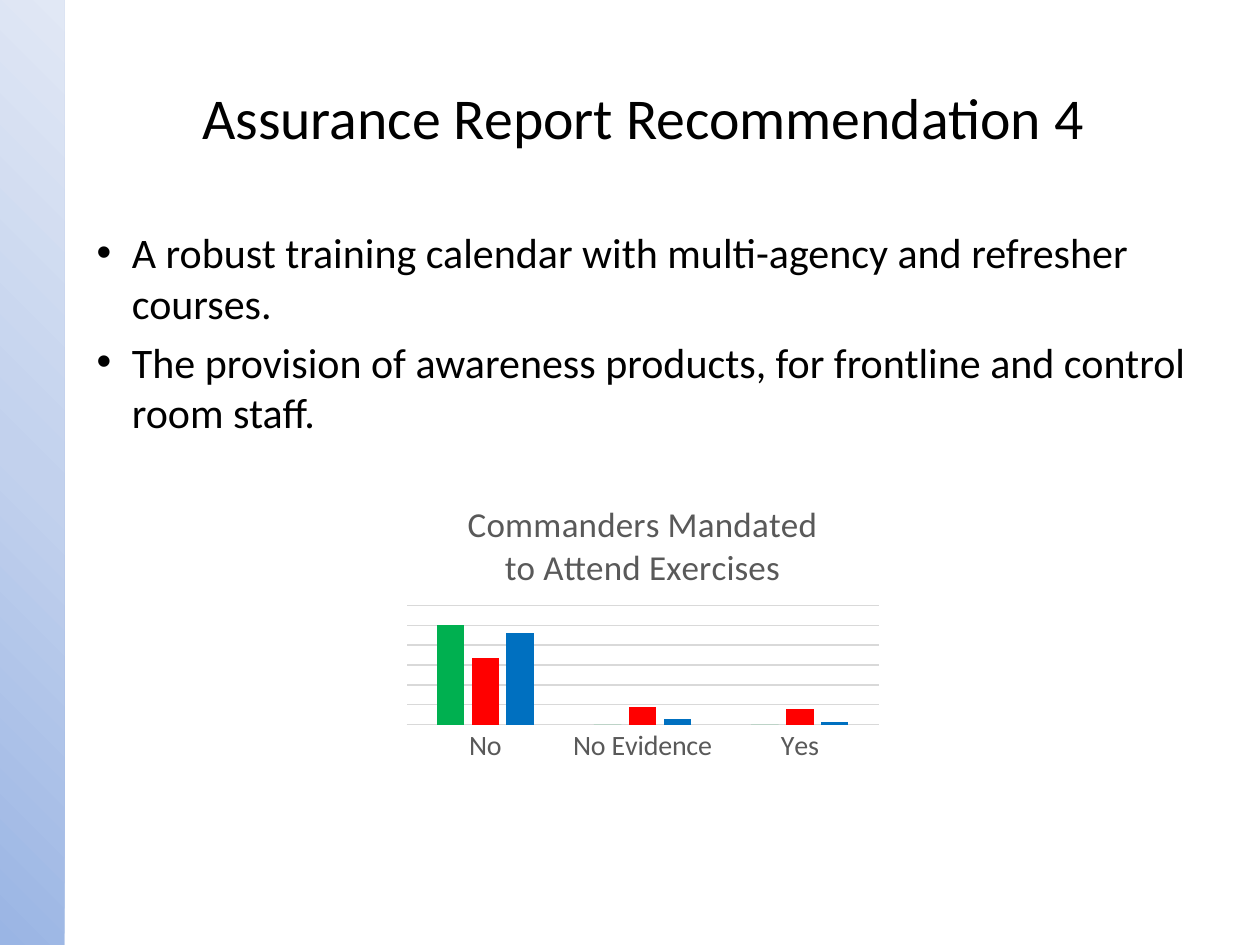
import copy
from dataclasses import dataclass

import pptx
import pptx.chart.data
import pptx.dml.color
import pptx.enum.chart
import pptx.enum.text
import pptx.oxml
import pptx.oxml.ns
import pptx.util
from pptx.util import Cm, Pt

FONT = "Calibri"
GREY, GRID = "595959", "D9D9D9"


@dataclass
class Series:
    name: str
    values: tuple
    color: str


@dataclass
class Box:
    left: float
    top: float
    width: float
    height: float

    def lengths(self) -> tuple:
        return Cm(self.left), Cm(self.top), Cm(self.width), Cm(self.height)


def rgb(color: str) -> pptx.dml.color.RGBColor:
    return pptx.dml.color.RGBColor.from_string(color)


def apply(obj, values: dict) -> None:
    for name, value in values.items():
        setattr(obj, name, value)


def set_font(font, size: float, color: str) -> None:
    apply(font, {"name": FONT, "size": Pt(size), "bold": False})
    font.color.rgb = rgb(color)


def set_line(line, color: str) -> None:
    line.color.rgb = rgb(color)
    line.width = Pt(0.75)


def add_side_bar(s, box: Box, colors: list) -> None:
    sp = s.shapes.add_shape(pptx.enum.shapes.MSO_SHAPE.RECTANGLE, *box.lengths())
    sp.shadow.inherit = False
    sp.line.fill.background()
    sp.fill.gradient()
    sp.fill.gradient_angle = 45
    # The default gradient has two stops; add the middle one
    first = sp.element.spPr.find(".//" + pptx.oxml.ns.qn("a:gs"))
    first.addnext(copy.deepcopy(first))
    for i, (stop, color) in enumerate(zip(sp.fill.gradient_stops, colors)):
        stop.position = i / (len(colors) - 1)
        stop.color.rgb = rgb(color)


def set_title(s, box: Box, text: str) -> None:
    sp = s.shapes.title
    apply(sp, dict(zip(("left", "top", "width", "height"), box.lengths())))
    tf = sp.text_frame
    apply(tf, {"text": text, "word_wrap": True,
               "vertical_anchor": pptx.enum.text.MSO_ANCHOR.MIDDLE})
    p = tf.paragraphs[0]
    p.alignment = pptx.enum.text.PP_ALIGN.CENTER
    set_font(p.runs[0].font, 33, "000000")


def add_bullets(s, box: Box, lines: list) -> None:
    tf = s.shapes.add_textbox(*box.lengths()).text_frame
    tf.word_wrap = True
    for i, line in enumerate(lines):
        p = tf.add_paragraph() if i else tf.paragraphs[0]
        p.space_before = Pt(4.8 if i else 0)
        pPr = p._p.get_or_add_pPr()
        pPr.set("marL", str(Cm(0.71)))
        pPr.set("indent", str(-Cm(0.71)))
        for tag, key, value in (("buFont", "typeface", "Arial"), ("buChar", "char", "•")):
            pPr.append(pptx.oxml.parse_xml(
                f'<a:{tag} {pptx.oxml.ns.nsdecls("a")} {key}="{value}"/>'))
        r = p.add_run()
        r.text = line
        set_font(r.font, 24, "000000")


def add_column_chart(s, box: Box, title: str, categories: list, series: list) -> None:
    data = pptx.chart.data.CategoryChartData()
    data.categories = categories
    for item in series:
        data.add_series(item.name, item.values)
    chart = s.shapes.add_chart(
        pptx.enum.chart.XL_CHART_TYPE.COLUMN_CLUSTERED, *box.lengths(), data).chart
    set_font(chart.font, 10, "000000")
    chart.has_legend = False

    # Title
    chart.has_title = True
    tf = chart.chart_title.text_frame
    tf.text = title
    set_font(tf.paragraphs[0].runs[0].font, 20, GREY)
    chart.chart_title.include_in_layout = False

    # Columns
    plot = chart.plots[0]
    apply(plot, {"gap_width": 219, "overlap": -27, "vary_by_categories": False})
    for item, ser in zip(series, plot.series):
        ser.format.fill.solid()
        ser.format.fill.fore_color.rgb = rgb(item.color)

    # Axes
    none = pptx.enum.chart.XL_TICK_MARK.NONE
    cat, val = chart.category_axis, chart.value_axis
    apply(cat, {"major_tick_mark": none, "minor_tick_mark": none})
    set_font(cat.tick_labels.font, 16, GREY)
    set_line(cat.format.line, GRID)
    apply(val, {"visible": False, "has_major_gridlines": True,
                "minimum_scale": 0, "maximum_scale": 120, "major_unit": 20})
    set_line(val.major_gridlines.format.line, GRID)

    # Plot area position, as fractions of the chart
    parts = "".join(f'<c:{k} val="{v}"/>' for k, v in (
        ("layoutTarget", "inner"), ("xMode", "edge"), ("yMode", "edge"),
        ("x", 0.02), ("y", 0.43), ("w", 0.96), ("h", 0.41)))
    area = chart.element.chart.plotArea
    for old in area.findall(pptx.oxml.ns.qn("c:layout")):
        area.remove(old)
    area.insert(0, pptx.oxml.parse_xml(
        f'<c:layout {pptx.oxml.ns.nsdecls("c")}><c:manualLayout>{parts}'
        "</c:manualLayout></c:layout>"))


def main() -> None:
    prs = pptx.Presentation()
    apply(prs, {"slide_width": Cm(25.4), "slide_height": Cm(19.05)})
    s = prs.slides.add_slide(prs.slide_layouts[5])

    add_side_bar(s, Box(0, 0, 1.3, 19.05), ["9AB5E4", "C2D1ED", "E1E8F5"])
    set_title(s, Box(1.7, 0.76, 22.53, 3.18), "Assurance Report Recommendation 4")
    add_bullets(s, Box(1.7, 4.45, 22.53, 12.57), [
        "A robust training calendar with multi-agency and refresher courses.",
        "The provision of awareness products, for frontline and control room staff.",
    ])
    add_column_chart(
        s, Box(8, 9.68, 9.91, 5.87), "Commanders Mandated to Attend Exercises",
        ["No", "No Evidence", "Yes"],
        [Series("Series 1", (100, 0, 0), "00B050"),
         Series("Series 2", (67, 18, 16), "FF0000"),
         Series("Series 3", (92, 6, 3), "0070C0")])
    prs.save("out.pptx")


if __name__ == "__main__":
    main()
